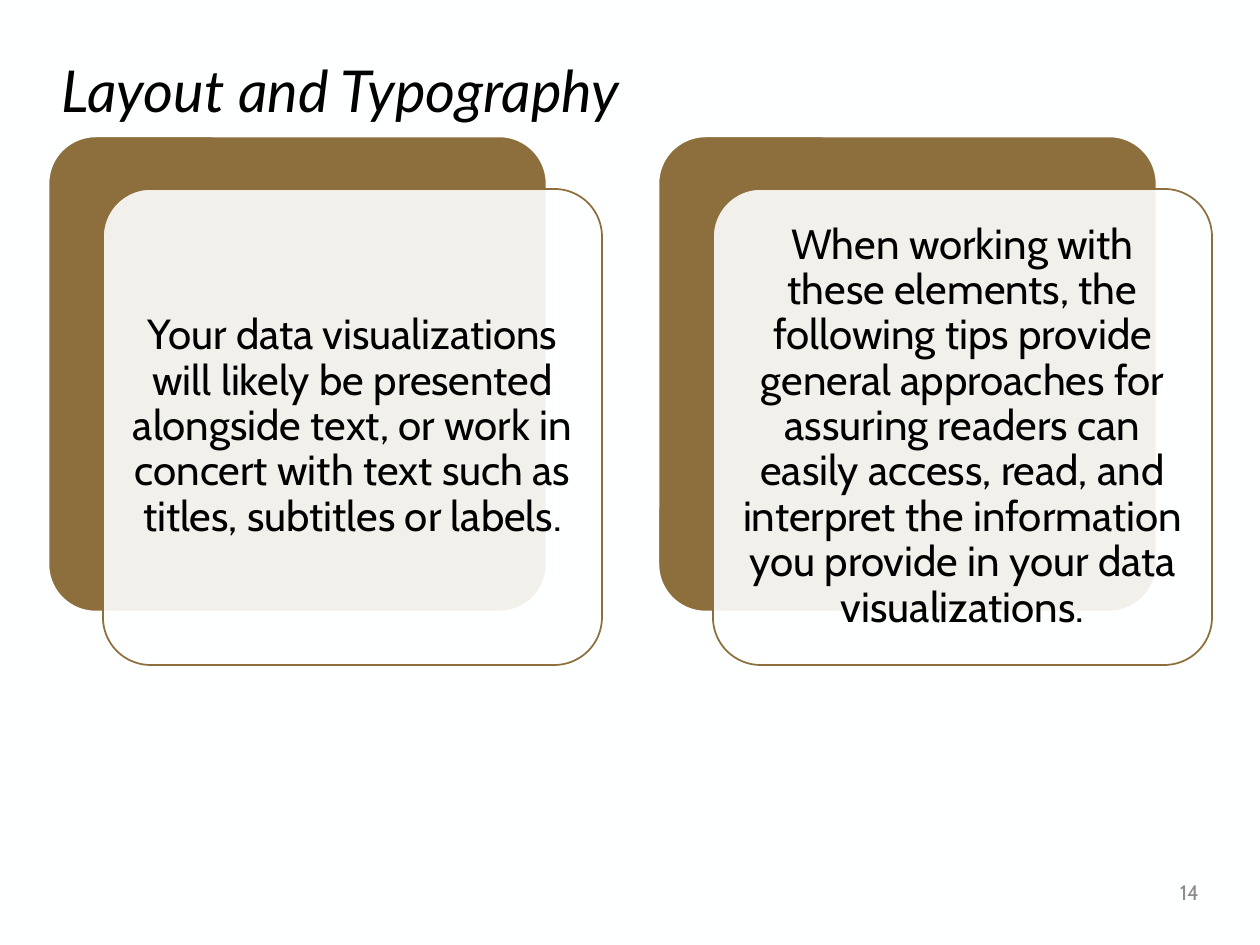
from lxml import etree
from pptx import Presentation
from pptx.dml.color import RGBColor
from pptx.enum.shapes import MSO_SHAPE
from pptx.enum.text import MSO_ANCHOR, PP_ALIGN
from pptx.oxml.ns import qn
from pptx.util import Pt

# Content
TITLE = "Layout and Typography"
PAGE_NUMBER = "14"
CARDS = [
    "Your data visualizations will likely be presented alongside text, "
    "or work in concert with text such as titles, subtitles or labels.",
    "When working with these elements, the following tips provide general "
    "approaches for assuring readers can easily access, read, and interpret "
    "the information you provide in your data visualizations.",
]

# Style
PAPER, BROWN, BLACK, GRAY = "FEFFFF", "8D6F3D", "000000", "8C8C8C"
HEADING_FONT, BODY_FONT = "Lato", "Cabin"

# Layout in px
SLIDE_WIDTH, SLIDE_HEIGHT = 1260, 945
CARD_LEFT, CARD_TOP, CARD_WIDTH, CARD_HEIGHT = 48, 136, 499, 476
CARD_PITCH = 610
FRONT_DX, FRONT_DY = 55, 53
TEXT_INSET = 14


def px(value):
    return round(value * 914400 / 126)


def color(value):
    return RGBColor.from_string(value)


def add_text(slide, box, text, size, font, ink, align, margins=(13, 6),
             italic=None, line_spacing=None):
    shape = slide.shapes.add_textbox(*map(px, box))
    frame = shape.text_frame
    frame.word_wrap = True
    frame.vertical_anchor = MSO_ANCHOR.MIDDLE
    frame.margin_left = frame.margin_right = px(margins[0])
    frame.margin_top = frame.margin_bottom = px(margins[1])
    paragraph = frame.paragraphs[0]
    paragraph.text = text
    paragraph.alignment = align
    paragraph.line_spacing = line_spacing
    paragraph.font.name = font
    paragraph.font.size = Pt(size)
    paragraph.font.italic = italic
    paragraph.font.color.rgb = color(ink)


def add_panel(slide, box, fill, line, line_width, opacity=100):
    shape = slide.shapes.add_shape(MSO_SHAPE.ROUNDED_RECTANGLE, *map(px, box))
    shape.adjustments[0] = 0.1
    shape.shadow.inherit = False
    shape.fill.solid()
    shape.fill.fore_color.rgb = color(fill)
    shape.line.color.rgb = color(line)
    shape.line.width = Pt(line_width)
    if opacity < 100:
        fill_color = shape.fill._xPr.find(qn("a:solidFill"))[0]
        etree.SubElement(fill_color, qn("a:alpha"), val=str(opacity * 1000))


def add_card(slide, left, text):
    add_panel(slide, (left, CARD_TOP, CARD_WIDTH, CARD_HEIGHT), BROWN, PAPER, 1.5)
    front_left, front_top = left + FRONT_DX, CARD_TOP + FRONT_DY
    add_panel(slide, (front_left, front_top, CARD_WIDTH, CARD_HEIGHT),
              PAPER, BROWN, 1, opacity=90)
    text_box = (front_left + TEXT_INSET, front_top + TEXT_INSET,
                CARD_WIDTH - 2 * TEXT_INSET, CARD_HEIGHT - 2 * TEXT_INSET)
    add_text(slide, text_box, text, 24, BODY_FONT, BLACK, PP_ALIGN.CENTER,
             margins=(12, 12), line_spacing=0.9)


def main():
    presentation = Presentation()
    presentation.slide_width = px(SLIDE_WIDTH)
    presentation.slide_height = px(SLIDE_HEIGHT)
    slide = presentation.slides.add_slide(presentation.slide_layouts[6])
    slide.background.fill.solid()
    slide.background.fill.fore_color.rgb = color(PAPER)

    # Title and page number
    add_text(slide, (48, 53, 1164, 81), TITLE, 33, HEADING_FONT, BLACK,
             PP_ALIGN.LEFT, italic=True, line_spacing=0.9)
    add_text(slide, (1061, 867, 151, 50), PAGE_NUMBER, 12, BODY_FONT, GRAY,
             PP_ALIGN.RIGHT)

    # Layered cards
    for index, text in enumerate(CARDS):
        add_card(slide, CARD_LEFT + index * CARD_PITCH, text)

    presentation.save("out.pptx")


if __name__ == "__main__":
    main()
